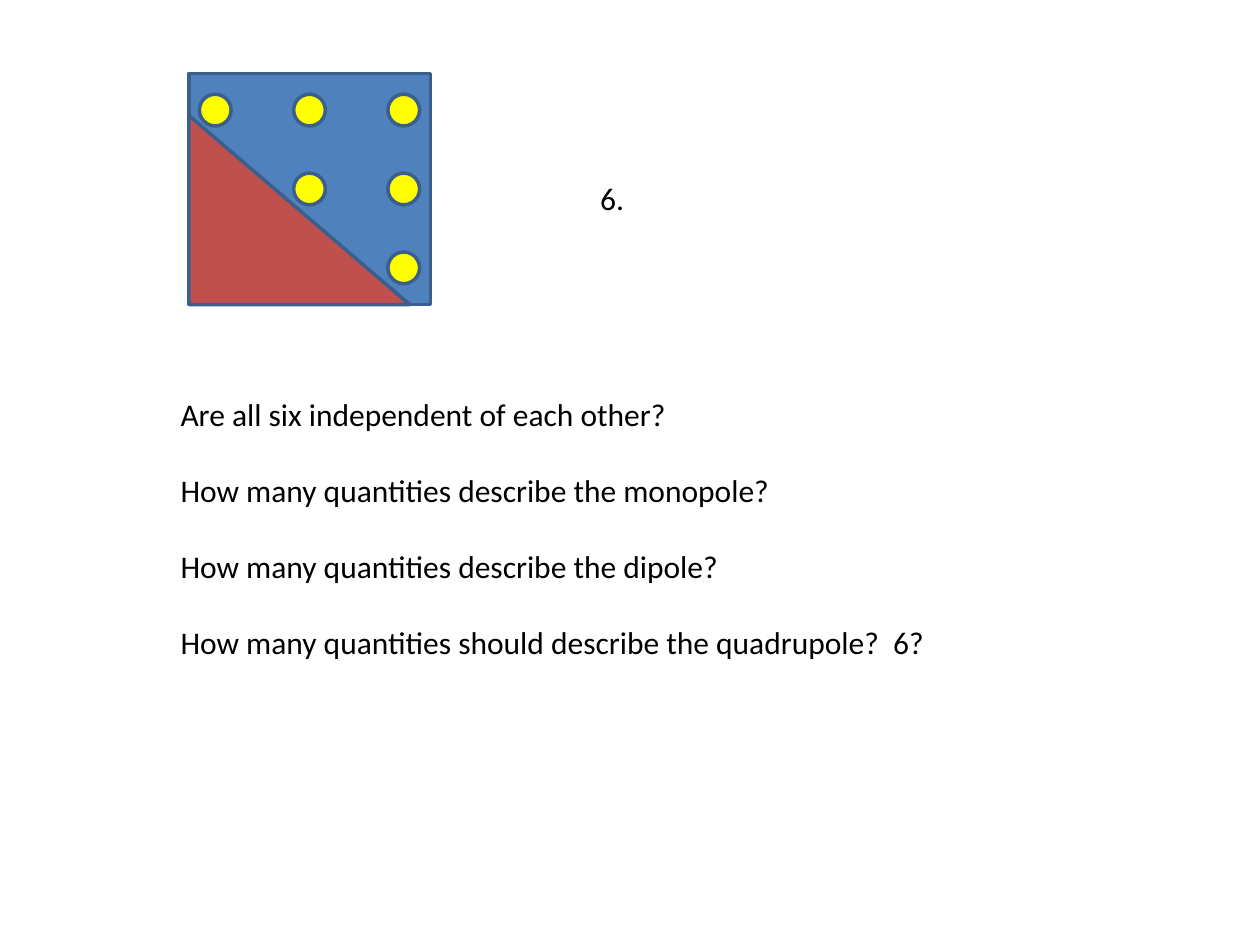
from dataclasses import dataclass

from pptx import Presentation
from pptx.dml.color import RGBColor
from pptx.enum.shapes import MSO_SHAPE as Shape
from pptx.enum.text import MSO_AUTO_SIZE as AutoSize
from pptx.util import Cm, Pt

BLUE = RGBColor(0x4F, 0x81, 0xBD)
RED = RGBColor(0xC0, 0x50, 0x4D)
YELLOW = RGBColor(0xFF, 0xFF, 0x00)
OUTLINE = RGBColor(0x3A, 0x5F, 0x8C)
BLACK = RGBColor(0, 0, 0)

BLANK_LAYOUT = 6
TEXT_FORMAT = {"name": "Calibri", "size": Pt(18)}
QUESTION_GAP = Pt(22)

DOT_SIZE = 0.64
DOT_LEFT, DOT_TOP = 4.02, 1.9
DOT_STEP_X, DOT_STEP_Y = 1.9, 1.59
MATRIX_SIZE = 3


@dataclass(frozen=True)
class Box:
    """Position and size in centimetres."""
    left: float
    top: float
    width: float
    height: float

    def lengths(self) -> tuple:
        return Cm(self.left), Cm(self.top), Cm(self.width), Cm(self.height)


@dataclass(frozen=True)
class Figure:
    kind: Shape
    box: Box
    fill: RGBColor


@dataclass(frozen=True)
class Note:
    box: Box
    lines: tuple


def upper_triangle_dots() -> list[Figure]:
    """One dot for each matrix entry on or above the diagonal."""
    return [
        Figure(
            Shape.OVAL,
            Box(DOT_LEFT + col * DOT_STEP_X, DOT_TOP + row * DOT_STEP_Y,
                DOT_SIZE, DOT_SIZE),
            YELLOW,
        )
        for row in range(MATRIX_SIZE)
        for col in range(row, MATRIX_SIZE)
    ]


FIGURES = [
    Figure(Shape.RECTANGLE, Box(3.81, 1.48, 4.87, 4.66), BLUE),
    Figure(Shape.RIGHT_TRIANGLE, Box(3.81, 2.33, 4.45, 3.81), RED),
    *upper_triangle_dots(),
]

NOTES = [
    Note(Box(11.85, 3.49, 1, 1.03), ("6.",)),
    Note(Box(3.39, 7.83, 15.7, 5.64), (
        "Are all six independent of each other?",
        "How many quantities describe the monopole?",
        "How many quantities describe the dipole?",
        "How many quantities should describe the quadrupole?  6?",
    )),
]


def draw_figure(slide, figure: Figure) -> None:
    sp = slide.shapes.add_shape(figure.kind, *figure.box.lengths())
    sp.shadow.inherit = False
    sp.fill.solid()
    sp.fill.fore_color.rgb = figure.fill
    sp.line.color.rgb = OUTLINE
    sp.line.width = Pt(2)


def draw_note(slide, note: Note) -> None:
    tf = slide.shapes.add_textbox(*note.box.lengths()).text_frame
    tf.word_wrap = False
    tf.auto_size = AutoSize.SHAPE_TO_FIT_TEXT
    for i, line in enumerate(note.lines):
        p = tf.add_paragraph() if i else tf.paragraphs[0]
        if i:
            p.space_before = QUESTION_GAP
        r = p.add_run()
        r.text = line
        for name, value in TEXT_FORMAT.items():
            setattr(r.font, name, value)
        r.font.color.rgb = BLACK


def main() -> None:
    prs = Presentation()
    prs.slide_width, prs.slide_height = Cm(25.4), Cm(19.05)
    slide = prs.slides.add_slide(prs.slide_layouts[BLANK_LAYOUT])
    for figure in FIGURES:
        draw_figure(slide, figure)
    for note in NOTES:
        draw_note(slide, note)
    prs.save("out.pptx")


if __name__ == "__main__":
    main()
